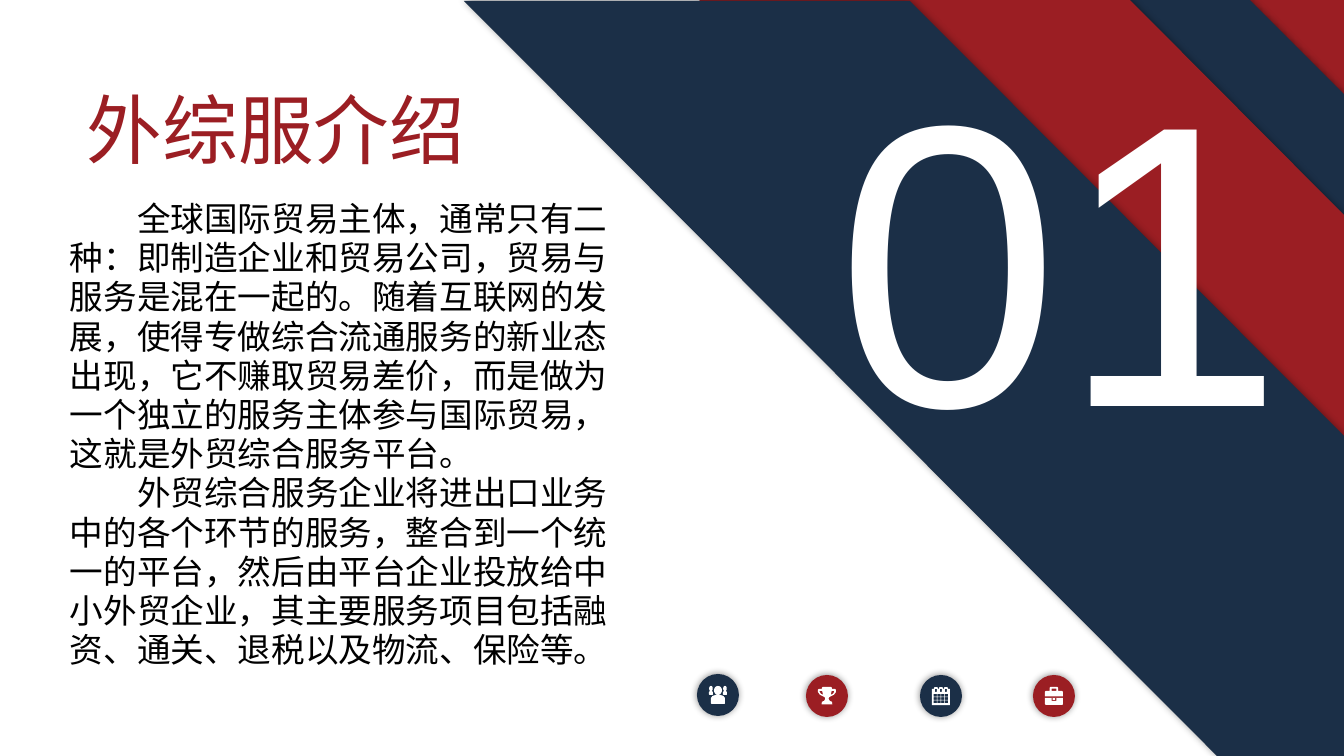
import math
from dataclasses import dataclass
from lxml import etree
from pptx import Presentation
from pptx import util as u
from pptx.dml.color import RGBColor
from pptx.enum import shapes, text
from pptx.oxml.ns import qn

PX = 914400 / 100.8  # EMU in one px
FINE = PX / 10       # EMU in one unit of the icon grid


@dataclass(frozen=True)
class Theme:
    navy: str = "1B2F47"
    red: str = "9B1E23"
    white: str = "FFFFFF"
    black: str = "000000"
    head_font: str = "Arial"
    body_font: str = "Calibri"
    number_size: int = 287
    title_size: int = 54
    body_size: int = 24
    body_leading: int = 28
    body_indent: int = 48


THEME = Theme()

# Content
NUMBER = "01"
TITLE = "外综服介绍"
BODY = [
    "全球国际贸易主体，通常只有二种：即制造企业和贸易公司，贸易与服务是混在一起的。"
    "随着互联网的发展，使得专做综合流通服务的新业态出现，它不赚取贸易差价，"
    "而是做为一个独立的服务主体参与国际贸易，这就是外贸综合服务平台。",
    "外贸综合服务企业将进出口业务中的各个环节的服务，整合到一个统一的平台，"
    "然后由平台企业投放给中小外贸企业，其主要服务项目包括融资、通关、退税以及物流、保险等。",
]

# Diagonal bands from back to front, corners in px
BANDS = [
    (THEME.red, [(1344, 301), (1045, 0), (1344, 0)]),
    (THEME.navy, [(1344, 430), (915, 0), (1250, 0), (1344, 94)]),
    (THEME.red, [(1344, 648), (699, 0), (1130, 0), (1344, 215)]),
    (THEME.navy, [(1344, 756), (1217, 756), (464, 1), (910, 1), (1344, 436)]),
]


# Icon contours on a grid of 180 by 180
def rect(left, top, width, height):
    return [(left, top), (left + width, top),
            (left + width, top + height), (left, top + height)]


def oval(x, y, rx, ry, steps=20):
    angles = [2 * math.pi * i / steps for i in range(steps)]
    return [(round(x + rx * math.cos(a)), round(y + ry * math.sin(a)))
            for a in angles]


def mirrored(half):
    return half + [(180 - x, y) for x, y in reversed(half)]


def people():
    contours = [oval(90, 44, 40, 44),
                mirrored([(65, 90), (35, 100), (20, 120), (20, 175), (27, 180)])]
    for x in (20, 160):
        contours += [oval(x, 26, 18, 26),
                     [(x - 12, 52), (x + 12, 52), (x + 20, 62), (x + 20, 85),
                      (x + 14, 90), (x - 14, 90), (x - 20, 85), (x - 20, 62)]]
    return contours


def trophy():
    cup = mirrored([(48, 0), (40, 8), (40, 20), (8, 20), (0, 28), (0, 50),
                    (20, 78), (65, 100), (74, 112), (68, 130), (60, 140),
                    (40, 148), (36, 175)])
    handle = [(18, 38), (42, 38), (52, 78), (30, 68), (18, 50)]
    return [cup, handle, [(180 - x, y) for x, y in handle]]


def calendar():
    contours = [rect(0, 20, 180, 160)]
    for x in (40, 90, 140):
        contours += [[(x - 22, 20), (x - 15, 2), (x + 15, 2), (x + 22, 20)],
                     rect(x - 10, 20, 20, 30)]
    contours += [rect(18 + 37 * column, 70 + 32 * row, 32, 27)
                 for row in range(3) for column in range(4)]
    return contours


def briefcase():
    return [mirrored([(8, 40), (0, 48), (0, 95)]),
            mirrored([(56, 0), (48, 8), (48, 40)]), rect(66, 18, 48, 22),
            mirrored([(0, 110), (0, 172), (8, 180)])[::-1],
            rect(66, 110, 48, 30), rect(78, 110, 24, 20)]


# Coins: centre x, centre y, fill, icon
COINS = [
    (718, 695, THEME.navy, people),
    (827, 696, THEME.red, trophy),
    (941, 696, THEME.navy, calendar),
    (1054, 696, THEME.red, briefcase),
]
COIN_SIZE, ICON_SIZE = 42, 18


# Drawing helpers
def px(length):
    return u.Emu(round(length * PX))


def paint(shape, color, shadow=False):
    shape.fill.solid()
    shape.fill.fore_color.rgb = RGBColor.from_string(color)
    shape.line.fill.background()
    shape.shadow.inherit = False
    if shadow:
        effects = shape.element.spPr.find(qn("a:effectLst"))
        outer = etree.SubElement(effects, qn("a:outerShdw"),
                                 blurRad=str(u.Pt(5)), dist="0", dir="0",
                                 algn="ctr", rotWithShape="0")
        tone = etree.SubElement(outer, qn("a:srgbClr"), val=THEME.black)
        etree.SubElement(tone, qn("a:alpha"), val="40000")


def add_outline(parent, contours, unit, color, left=0, top=0, shadow=False):
    builder = parent.build_freeform(*contours[0][0], scale=unit)
    builder.add_line_segments(contours[0][1:], close=True)
    for contour in contours[1:]:
        builder.move_to(*contour[0])
        builder.add_line_segments(contour[1:], close=True)
    paint(builder.convert_to_shape(px(left), px(top)), color, shadow)


def add_text(page, paragraphs, area, *, size, font, color, centred=False,
             inset=None, leading=None, indent=0):
    box = page.shapes.add_textbox(*map(px, area))
    frame = box.text_frame
    frame.word_wrap = True
    if inset is not None:
        frame.margin_left = frame.margin_right = px(inset)
        frame.margin_top = frame.margin_bottom = px(inset)
    for index, content in enumerate(paragraphs):
        para = frame.paragraphs[0] if index == 0 else frame.add_paragraph()
        para.alignment = text.PP_ALIGN.CENTER if centred else text.PP_ALIGN.LEFT
        if leading:
            para.line_spacing = u.Pt(leading)
        if indent:
            para._p.get_or_add_pPr().set("indent", str(u.Pt(indent)))
        span = para.add_run()
        span.text = content
        span.font.size = u.Pt(size)
        span.font.name = font
        span.font.color.rgb = RGBColor.from_string(color)


def main():
    deck = Presentation()
    deck.slide_width, deck.slide_height = px(1344), px(756)
    page = deck.slides.add_slide(deck.slide_layouts[6])

    # Bands
    for color, corners in BANDS:
        add_outline(page.shapes, [corners], PX, color, shadow=True)

    # Number, title and body
    add_text(page, [NUMBER], (803, 0, 515, 497), size=THEME.number_size,
             font=THEME.head_font, color=THEME.white, centred=True)
    add_text(page, [TITLE], (87, 83, 418, 92), size=THEME.title_size,
             font=THEME.head_font, color=THEME.red, inset=0)
    add_text(page, BODY, (60, 194, 584, 525), size=THEME.body_size,
             font=THEME.body_font, color=THEME.black,
             leading=THEME.body_leading, indent=THEME.body_indent)

    # Coins with icons
    for x, y, color, icon in COINS:
        group = page.shapes.add_group_shape().shapes
        coin = group.add_shape(shapes.MSO_SHAPE.OVAL, px(x - COIN_SIZE / 2),
                               px(y - COIN_SIZE / 2), px(COIN_SIZE), px(COIN_SIZE))
        paint(coin, color, shadow=True)
        add_outline(group, icon(), FINE, THEME.white,
                    left=x - ICON_SIZE / 2, top=y - ICON_SIZE / 2)

    deck.save("out.pptx")


if __name__ == "__main__":
    main()
